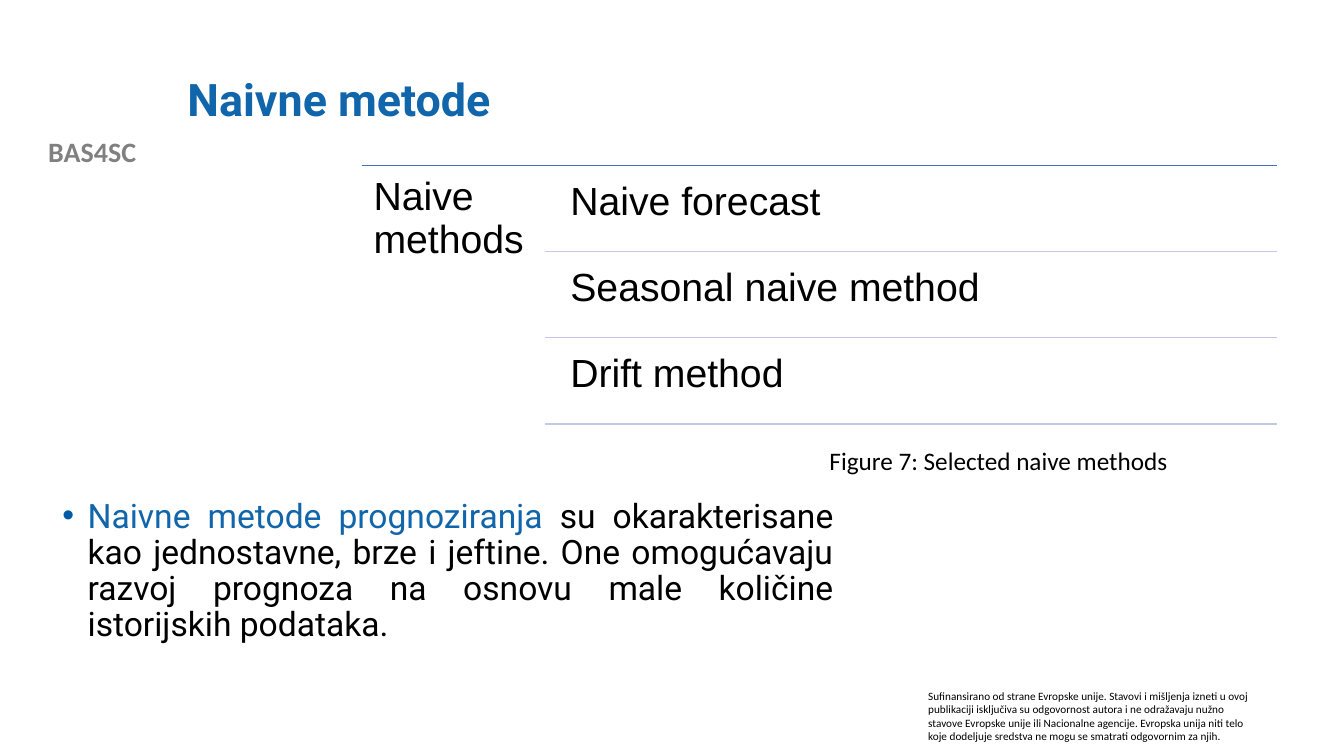
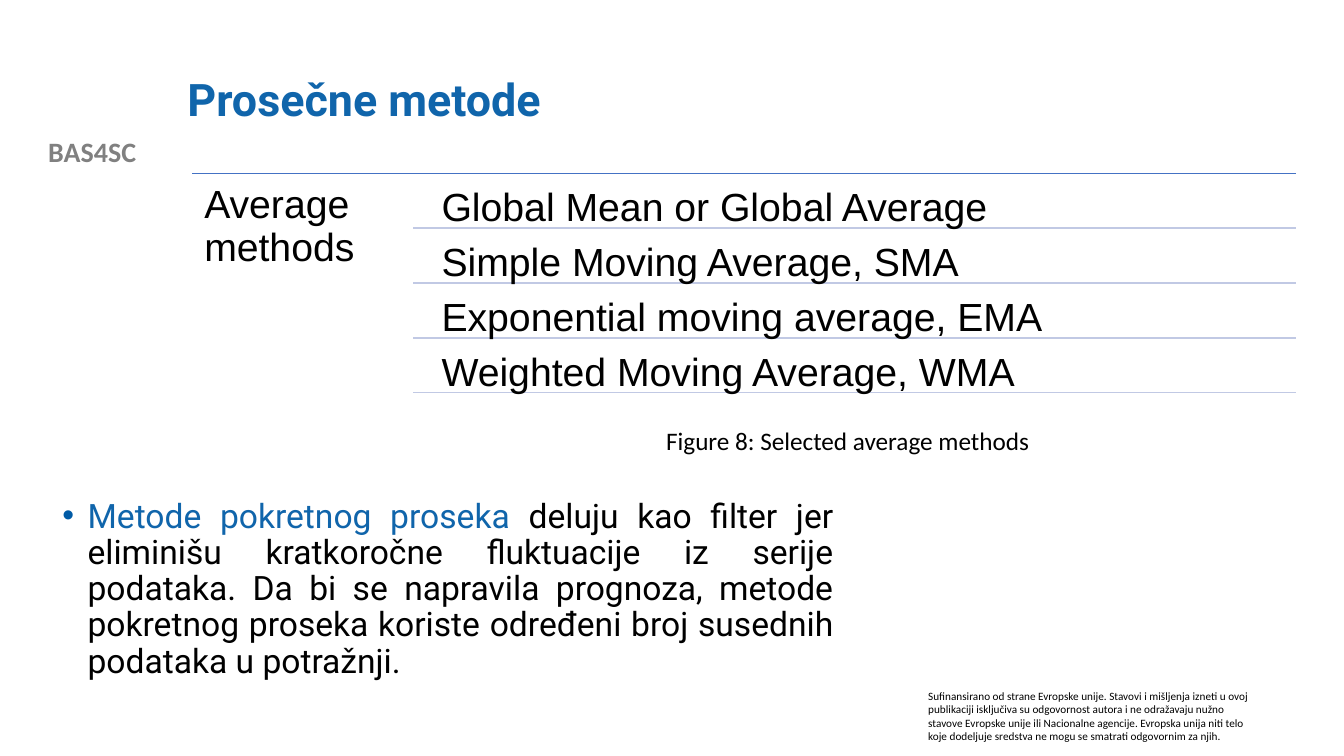
"""Build two slides on naive and average forecasting methods."""
from dataclasses import dataclass

from lxml.etree import SubElement
from pptx import Presentation
from pptx.dml.color import RGBColor
from pptx.enum.shapes import MSO_CONNECTOR as Connector
from pptx.enum.text import MSO_ANCHOR as Anchor, MSO_AUTO_SIZE as AutoSize, PP_ALIGN as Align
from pptx.oxml.ns import qn
from pptx.util import Pt


@dataclass(frozen=True)
class Theme:
    blue: str = "1065AB"
    bullet: str = "015BA6"
    black: str = "000000"
    grey: str = "808080"
    top_rule: str = "4472C4"
    row_rule: str = "C1C9E4"
    heading_font: str = "Roboto"
    diagram_font: str = "Arial"
    small_font: str = "Calibri"
    title_size: int = 32
    body_size: int = 24
    diagram_size: int = 28
    caption_size: int = 18
    project_size: int = 20
    disclaimer_size: int = 8


theme = Theme()


def write_text(shape, runs, font_name, size, bold=False, align=Align.LEFT, spacing=1.0, inset=None):
    frame = shape.text_frame
    frame.word_wrap = True
    frame.auto_size = AutoSize.NONE
    if inset is not None:
        frame.margin_left = frame.margin_right = Pt(inset)
        frame.margin_top = frame.margin_bottom = Pt(inset)
    paragraph = frame.paragraphs[0]
    paragraph.alignment = align
    paragraph.line_spacing = spacing
    paragraph.space_before = Pt(0)
    for text, color in runs:
        run = paragraph.add_run()
        run.text = text
        run.font.name = font_name
        run.font.size = Pt(size)
        run.font.bold = bold
        run.font.color.rgb = RGBColor.from_string(color)
    return paragraph


def add_rule(slide, left, right, top, color):
    rule = slide.shapes.add_connector(Connector.STRAIGHT, Pt(left), Pt(top), Pt(right), Pt(top))
    rule.line.color.rgb = RGBColor.from_string(color)
    rule.line.width = Pt(1)
    SubElement(rule.element.spPr, qn("a:effectLst"))


slides = [
    {
        "title": "Naivne metode",
        "lead": "Naivne metode prognoziranja ",
        "body": "su okarakterisane kao jednostavne, brze i jeftine. One omogućavaju razvoj "
                "prognoza na osnovu male količine istorijskih podataka.",
        "family": "Naive methods",
        "methods": ["Naive forecast", "Seasonal naive method", "Drift method"],
        "diagram": (258.5, 118.1, 653.7, 61.6),
        "caption": "Figure 7: Selected naive methods",
        "caption_box": (585.4, 314.6, 260.6, 28.8),
    },
    {
        "title": "Prosečne metode",
        "lead": "Metode pokretnog proseka ",
        "body": "deluju kao filter jer eliminišu kratkoročne fluktuacije iz serije podataka. "
                "Da bi se napravila prognoza, metode pokretnog proseka koriste određeni broj "
                "susednih podataka u potražnji.",
        "family": "Average methods",
        "methods": [
            "Global Mean or Global Average",
            "Simple Moving Average, SMA",
            "Exponential moving average, EMA",
            "Weighted Moving Average, WMA",
        ],
        "diagram": (137.5, 123.8, 788.4, 39.2),
        "caption": "Figure 8: Selected average methods",
        "caption_box": (468.7, 300.2, 457.2, 28.8),
    },
]

project = "BAS4SC"
disclaimer = (
    "Sufinansirano od strane Evropske unije. Stavovi i mišljenja izneti u ovoj publikaciji "
    "isključiva su odgovornost autora i ne odražavaju nužno stavove Evropske unije ili "
    "Nacionalne agencije. Evropska unija niti telo koje dodeljuje sredstva ne mogu se "
    "smatrati odgovornim za njih."
)

presentation = Presentation()
presentation.slide_width = Pt(960)
presentation.slide_height = Pt(540)
layout = presentation.slide_layouts[1]

placeholder_boxes = [(126.7, 28.8, 767.5, 87.8), (37.4, 352.8, 565.2, 158.4)]
for index, box in enumerate(placeholder_boxes):
    placeholder = layout.placeholders[index]
    placeholder.left, placeholder.top, placeholder.width, placeholder.height = map(Pt, box)

shared_texts = [
    ((0, 92.2, 131.8, 31.7), project, theme.grey, theme.project_size, True, Align.CENTER),
    ((655.9, 488.9, 244.1, 46.1), disclaimer, theme.black, theme.disclaimer_size, False, Align.LEFT),
]

for number, content in enumerate(slides):
    slide = presentation.slides.add_slide(layout)

    if number == 0:
        for shape_id, (box, text, color, size, bold, align) in enumerate(shared_texts, 20):
            shared_box = slide.shapes.add_textbox(*map(Pt, box))
            write_text(shared_box, [(text, color)], theme.small_font, size, bold, align)
            shared_box.element.nvSpPr.cNvPr.set("id", str(shape_id))
            layout.shapes.element.append(shared_box.element)

    title = slide.shapes.title
    title.text_frame.vertical_anchor = Anchor.MIDDLE
    write_text(title, [(content["title"], theme.blue)], theme.heading_font,
               theme.title_size, bold=True, spacing=0.9)

    runs = [(content["lead"], theme.blue), (content["body"], theme.black)]
    paragraph = write_text(slide.placeholders[1], runs, theme.heading_font, theme.body_size,
                           align=Align.JUSTIFY, spacing=0.9)
    properties = paragraph._p.get_or_add_pPr()
    properties.set("marL", str(Pt(18)))
    properties.set("indent", str(Pt(-18)))
    bullet_color = SubElement(properties, qn("a:buClr"))
    SubElement(bullet_color, qn("a:srgbClr"), val=theme.bullet)
    SubElement(properties, qn("a:buFont"), typeface=theme.diagram_font)
    SubElement(properties, qn("a:buChar"), char="•")

    left, top, width, pitch = content["diagram"]
    right = left + width
    branch = left + 0.2 * width
    item_left = branch + 0.015 * width
    gap = 0.05 * pitch
    family_height = len(content["methods"]) * pitch + gap

    add_rule(slide, left, right, top, theme.top_rule)
    diagram_texts = [(content["family"], (left, top, branch - left, family_height))]
    for row, method in enumerate(content["methods"]):
        row_top = top + row * pitch
        diagram_texts.append((method, (item_left, row_top + gap, right - item_left, pitch - gap)))
        add_rule(slide, branch, right, row_top + pitch, theme.row_rule)
    for text, box in diagram_texts:
        diagram_box = slide.shapes.add_textbox(*map(Pt, box))
        write_text(diagram_box, [(text, theme.black)], theme.diagram_font,
                   theme.diagram_size, spacing=0.9, inset=8.4)

    caption_box = slide.shapes.add_textbox(*map(Pt, content["caption_box"]))
    write_text(caption_box, [(content["caption"], theme.black)], theme.small_font,
               theme.caption_size)

presentation.save("out.pptx")
